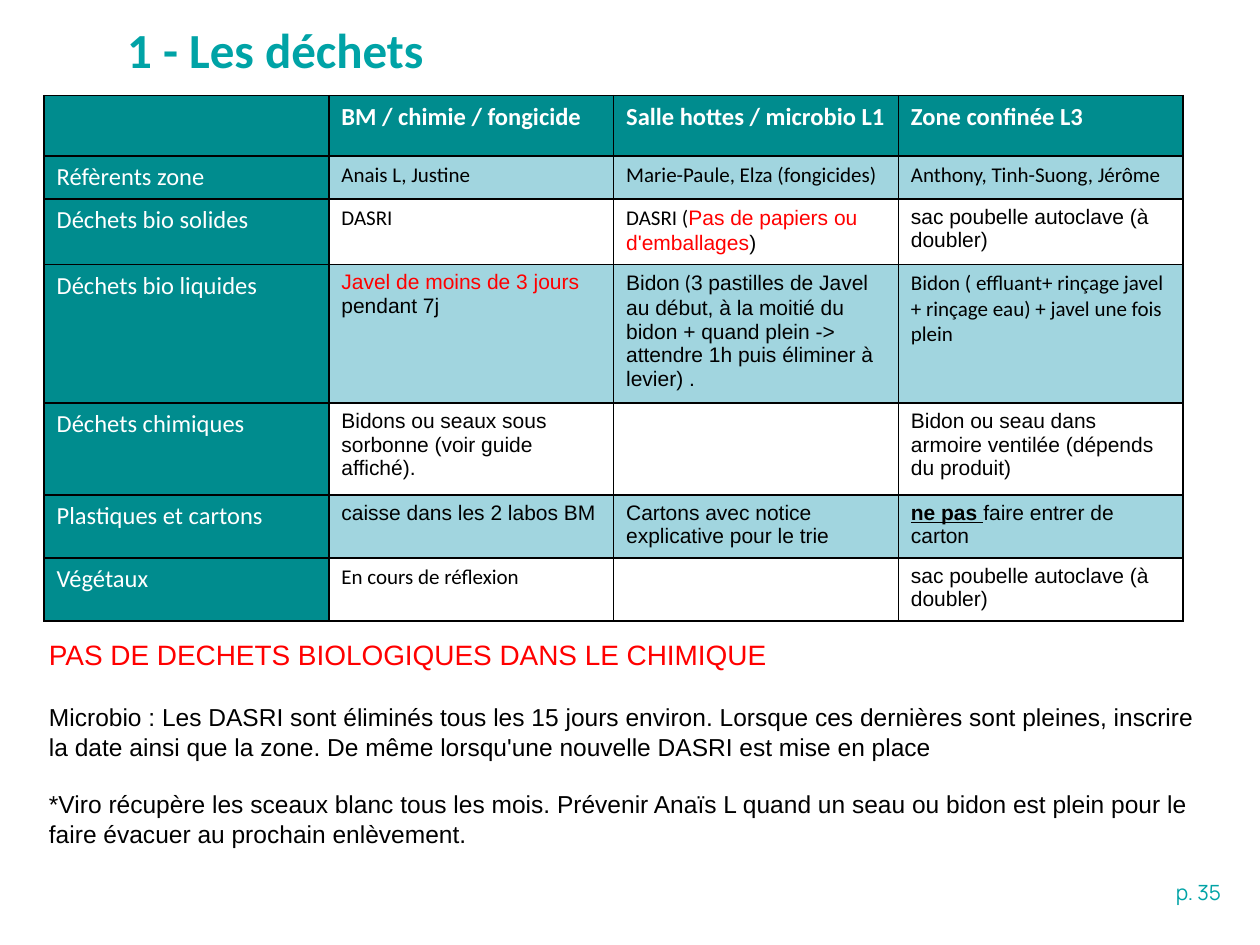
from dataclasses import dataclass

from lxml.etree import SubElement
from pptx import Presentation
from pptx.dml.color import RGBColor
from pptx.enum.text import MSO_ANCHOR as Anchor, MSO_AUTO_SIZE as AutoSize, PP_ALIGN as Align
from pptx.oxml.ns import qn
from pptx.util import Inches, Pt

TEAL = RGBColor(0x00, 0xA3, 0xA6)
DARK_TEAL = RGBColor(0x00, 0x8C, 0x8E)
PALE_BLUE = RGBColor(0xA1, 0xD5, 0xDF)
WHITE = RGBColor(0xFF, 0xFF, 0xFF)
BLACK = RGBColor(0x00, 0x00, 0x00)
RED = RGBColor(0xFF, 0x00, 0x00)


@dataclass(frozen=True)
class Span:
    text: str
    font: str = "Arial"
    size: float = 12
    color: RGBColor = BLACK
    bold: bool = False
    underline: bool = False


@dataclass(frozen=True)
class Note:
    span: Span
    space_before: float = 0


def calibri(text: str) -> Span:
    return Span(text, "Calibri")


def label(text: str, bold: bool = False) -> Span:
    return Span(text, "Calibri", 14, WHITE, bold)


ZONES = ["BM / chimie / fongicide", "Salle hottes / microbio L1", "Zone confinée L3"]
AUTOCLAVE_BAG = [Span("sac poubelle autoclave (à doubler)")]
WASTE_RULES = [
    ("Réfèrents zone", 0.34, [
        [calibri("Anais L, Justine")],
        [calibri("Marie-Paule, Elza (fongicides)")],
        [calibri("Anthony, Tinh-Suong, Jérôme")],
    ]),
    ("Déchets bio solides", 0.52, [
        [calibri("DASRI")],
        [calibri("DASRI ("), Span("Pas de papiers ou d'emballages", color=RED), Span(")")],
        AUTOCLAVE_BAG,
    ]),
    ("Déchets bio liquides", 1.1, [
        [Span("Javel de moins de 3 jours ", color=RED), Span("pendant 7j")],
        [Span("Bidon"), calibri(" ("),
         Span("3 pastilles de Javel au début, à la moitié du bidon + quand plein -> "
              "attendre 1h puis éliminer à levier) .")],
        [calibri("Bidon ( effluant+ rinçage javel + rinçage eau) + javel une fois plein")],
    ]),
    ("Déchets chimiques", 0.73, [
        [Span("Bidons ou seaux sous sorbonne (voir guide affiché).")],
        [],
        [Span("Bidon ou seau dans armoire ventilée (dépends du produit)")],
    ]),
    ("Plastiques et cartons", 0.5, [
        [Span("caisse dans les 2 labos BM")],
        [Span("Cartons avec notice explicative pour le trie")],
        [Span("ne pas ", bold=True, underline=True), Span("faire entrer de carton")],
    ]),
    ("Végétaux", 0.5, [
        [calibri("En cours de réflexion")],
        [],
        AUTOCLAVE_BAG,
    ]),
]
HEADER_HEIGHT = 0.48
COLUMN_WIDTH = 2.26

NOTES = [
    Note(Span("PAS DE DECHETS BIOLOGIQUES DANS LE CHIMIQUE", size=16, color=RED)),
    Note(Span("Microbio : Les DASRI sont éliminés tous les 15 jours environ. Lorsque ces "
              "dernières sont pleines, inscrire la date ainsi que la zone. De même "
              "lorsqu'une nouvelle DASRI est mise en place", size=14), 18),
    Note(Span("*Viro récupère les sceaux blanc tous les mois. Prévenir Anaïs L quand un "
              "seau ou bidon est plein pour le faire évacuer au prochain enlèvement.",
              size=14), 16),
]


def write(paragraph, spans: list[Span]) -> None:
    for span in spans:
        run = paragraph.add_run()
        run.text = span.text
        formats = {"name": span.font, "size": Pt(span.size),
                   "bold": span.bold, "underline": span.underline}
        for attribute, value in formats.items():
            setattr(run.font, attribute, value)
        run.font.color.rgb = span.color


def place(shape, left: float, top: float, width: float, height: float) -> None:
    bounds = {"left": left, "top": top, "width": width, "height": height}
    for attribute, value in bounds.items():
        setattr(shape, attribute, Inches(value))


def add_borders(cell) -> None:
    properties = cell._tc.get_or_add_tcPr()
    for side in ("a:lnL", "a:lnR", "a:lnT", "a:lnB"):
        line = SubElement(properties, qn(side), w=str(Pt(1)))
        fill = SubElement(line, qn("a:solidFill"))
        SubElement(fill, qn("a:srgbClr"), val=str(BLACK))


def fill_cell(cell, spans: list[Span], color: RGBColor) -> None:
    add_borders(cell)
    cell.fill.solid()
    cell.fill.fore_color.rgb = color
    write(cell.text_frame.paragraphs[0], spans)


def add_title(slide) -> None:
    title = slide.shapes.title
    place(title, 0.91, 0.15, 8.38, 0.53)
    formats = {"vertical_anchor": Anchor.MIDDLE, "auto_size": AutoSize.NONE}
    for attribute, value in formats.items():
        setattr(title.text_frame, attribute, value)
    heading = title.text_frame.paragraphs[0]
    heading.alignment = Align.LEFT
    heading.line_spacing = 0.9
    write(heading, [Span("1 - Les déchets", "Calibri", 28, TEAL, True)])


def add_waste_table(slide) -> None:
    heights = [HEADER_HEIGHT] + [height for _, height, _ in WASTE_RULES]
    columns = len(ZONES) + 1
    table = slide.shapes.add_table(
        len(heights), columns, Inches(0.35), Inches(0.76),
        Inches(columns * COLUMN_WIDTH), Inches(sum(heights))).table
    for attribute in ("first_row", "horz_banding"):
        setattr(table, attribute, False)
    for column in table.columns:
        column.width = Inches(COLUMN_WIDTH)
    for row, height in zip(table.rows, heights):
        row.height = Inches(height)

    fill_cell(table.cell(0, 0), [], DARK_TEAL)
    for column, zone in enumerate(ZONES, 1):
        fill_cell(table.cell(0, column), [label(zone, True)], DARK_TEAL)
    for row, (waste, _, rules) in enumerate(WASTE_RULES, 1):
        fill_cell(table.cell(row, 0), [label(waste)], DARK_TEAL)
        for column, rule in enumerate(rules, 1):
            fill_cell(table.cell(row, column), rule, PALE_BLUE if row % 2 else WHITE)


def add_notes(slide, bounds: tuple[float, ...], notes: list[Note],
              alignment: Align = Align.LEFT) -> None:
    frame = slide.shapes.add_textbox(*map(Inches, bounds)).text_frame
    frame.word_wrap = True
    for index, note in enumerate(notes):
        paragraph = frame.add_paragraph() if index else frame.paragraphs[0]
        paragraph.alignment = alignment
        if note.space_before:
            paragraph.space_before = Pt(note.space_before)
        write(paragraph, [note.span])


def main() -> None:
    deck = Presentation()
    deck.slide_width, deck.slide_height = Inches(10), Inches(7.5)
    slide = deck.slides.add_slide(deck.slide_layouts[5])
    add_title(slide)
    add_waste_table(slide)
    add_notes(slide, (0.29, 5.01, 9.41, 2.36), NOTES)
    add_notes(slide, (7.51, 6.93, 2.28, 0.3),
              [Note(Span("p. 35", "Manrope", 12, TEAL))], Align.RIGHT)
    deck.save("out.pptx")


if __name__ == "__main__":
    main()
